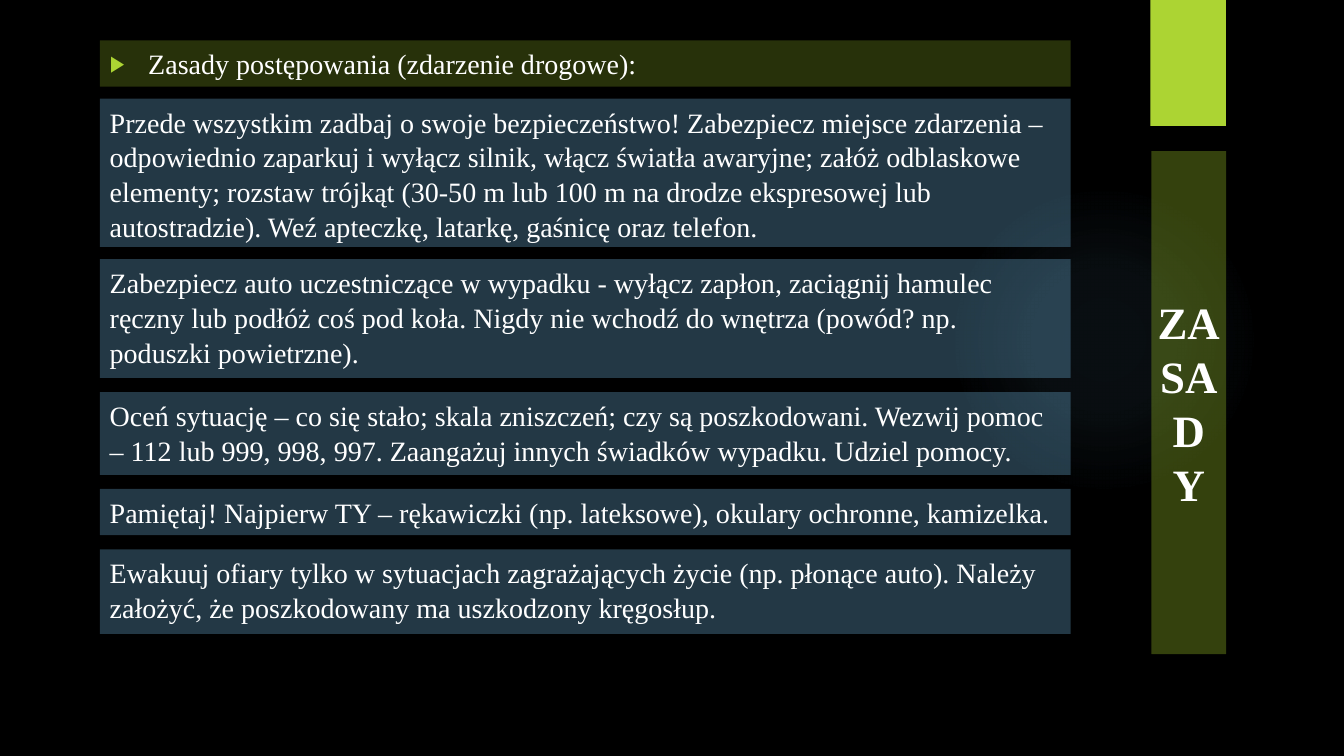
from lxml.etree import SubElement
from pptx import Presentation
from pptx.dml.color import RGBColor
from pptx.enum.shapes import MSO_SHAPE
from pptx.enum.text import MSO_ANCHOR, MSO_AUTO_SIZE, PP_ALIGN
from pptx.oxml import parse_xml
from pptx.oxml.ns import nsdecls, qn
from pptx.util import Inches, Pt

FONT = "Times New Roman"
WHITE, BLACK = "FFFFFF", "000000"
LIME, OLIVE, SKY = "ACD433", "83A322", "7AC4F0"

RULES_LEFT, RULES_WIDTH = 0.99, 9.63
RULES = [
    (0.98, 1.47, "Przede wszystkim zadbaj o swoje bezpieczeństwo! Zabezpiecz miejsce zdarzenia – "
     "odpowiednio zaparkuj i wyłącz silnik, włącz światła awaryjne; załóż odblaskowe elementy; "
     "rozstaw trójkąt (30-50 m lub 100 m na drodze ekspresowej lub autostradzie). "
     "Weź apteczkę, latarkę, gaśnicę oraz telefon."),
    (2.57, 1.18, "Zabezpiecz auto uczestniczące w wypadku - wyłącz zapłon, zaciągnij hamulec "
     "ręczny lub podłóż coś pod koła. Nigdy nie wchodź do wnętrza (powód? np. poduszki "
     "powietrzne)."),
    (3.89, 0.82, "Oceń sytuację – co się stało; skala zniszczeń; czy są poszkodowani. Wezwij "
     "pomoc – 112 lub 999, 998, 997. Zaangażuj innych świadków wypadku. Udziel pomocy."),
    (4.85, 0.46, "Pamiętaj! Najpierw TY – rękawiczki (np. lateksowe), okulary ochronne, kamizelka."),
    (5.45, 0.84, "Ewakuuj ofiary tylko w sytuacjach zagrażających życie (np. płonące auto). "
     "Należy założyć, że poszkodowany ma uszkodzony kręgosłup."),
]


def color(value):
    return RGBColor.from_string(value)


def paint(shape, fill, opacity=100):
    shape.fill.solid()
    shape.fill.fore_color.rgb = color(fill)
    if opacity < 100:
        tint = shape.fill._xPr.find(qn("a:solidFill"))[0]
        SubElement(tint, qn("a:alpha"), val=str(opacity * 1000))


def write(shape, text, size=20, bold=False, align=PP_ALIGN.LEFT, anchor=MSO_ANCHOR.TOP,
          spacing=1.04, bullet=None):
    frame = shape.text_frame
    frame.word_wrap = True
    frame.auto_size = MSO_AUTO_SIZE.NONE
    frame.vertical_anchor = anchor
    frame.text = text
    paragraph = frame.paragraphs[0]
    paragraph.alignment = align
    paragraph.line_spacing = spacing
    paragraph.space_before = Pt(0)
    if bullet:
        properties = paragraph._p.get_or_add_pPr()
        properties.set("marL", str(Inches(0.38)))
        properties.set("indent", str(Inches(-0.38)))
        tint = SubElement(properties, qn("a:buClr"))
        SubElement(tint, qn("a:srgbClr"), val=LIME)
        SubElement(properties, qn("a:buSzPct"), val="80000")
        SubElement(properties, qn("a:buChar"), char=bullet)
    font = paragraph.font
    font.name, font.size, font.bold = FONT, Pt(size), bold
    font.color.rgb = color(WHITE)


class RulesSlide:
    def __init__(self, deck):
        self.slide = deck.slides.add_slide(deck.slide_layouts[1])
        self.slide.background.fill.solid()
        self.slide.background.fill.fore_color.rgb = color(BLACK)

    def place(self, shape, left, top, width, height):
        shape.left, shape.top = Inches(left), Inches(top)
        shape.width, shape.height = Inches(width), Inches(height)

    def block(self, kind, left, top, width, height, fill, opacity=100):
        shape = self.slide.shapes.add_shape(
            kind, Inches(left), Inches(top), Inches(width), Inches(height))
        shape.shadow.inherit = False
        shape.line.fill.background()
        paint(shape, fill, opacity)
        return shape

    def glow(self, left, top, size):
        glow = self.block(MSO_SHAPE.OVAL, left, top, size, size, SKY)
        stops = "".join(
            f'<a:gs pos="{position * 1000}"><a:srgbClr val="{SKY}">'
            f'<a:alpha val="{opacity * 1000}"/></a:srgbClr></a:gs>'
            for position, opacity in ((0, 7), (36, 6), (69, 0), (100, 0)))
        gradient = parse_xml(
            f'<a:gradFill {nsdecls("a")}><a:gsLst>{stops}</a:gsLst><a:path path="circle">'
            '<a:fillToRect l="50000" t="50000" r="50000" b="50000"/></a:path></a:gradFill>')
        solid = glow._element.spPr.find(qn("a:solidFill"))
        solid.getparent().replace(solid, gradient)
        self.slide.shapes._spTree.insert(2, glow._element)

    def tab(self, left, top, width, height):
        tab = self.block(MSO_SHAPE.RECTANGLE, left, top, width, height, LIME)
        effects = tab._element.spPr.find(qn("a:effectLst"))
        shadow = SubElement(effects, qn("a:outerShdw"), blurRad=str(Pt(3)), dist=str(Pt(2)),
                            dir="5400000", rotWithShape="0")
        tint = SubElement(shadow, qn("a:srgbClr"), val=BLACK)
        SubElement(tint, qn("a:alpha"), val="45000")

    def title(self, text, *box):
        title = self.slide.shapes.title
        self.place(title, *box)
        paint(title, OLIVE, 40)
        write(title, text, size=32, bold=True, align=PP_ALIGN.CENTER,
              anchor=MSO_ANCHOR.MIDDLE, spacing=1)
        title.text_frame._txBody.bodyPr.set("vert", "vert")

    def heading(self, text, *box):
        heading = self.slide.placeholders[1]
        self.place(heading, *box)
        paint(heading, OLIVE, 30)
        write(heading, text, bullet="▶")

    def rule(self, text, *box):
        write(self.block(MSO_SHAPE.RECTANGLE, *box, SKY, 29), text)


def main():
    deck = Presentation()
    deck.slide_width, deck.slide_height = Inches(13.33), Inches(7.5)
    page = RulesSlide(deck)
    page.glow(9.41, 1.83, 3.08)
    page.tab(11.41, 0, 0.75, 1.25)
    page.title("ZASADY", 11.42, 1.5, 0.74, 4.99)
    page.heading("Zasady postępowania (zdarzenie drogowe):", RULES_LEFT, 0.4, RULES_WIDTH, 0.46)
    for top, height, text in RULES:
        page.rule(text, RULES_LEFT, top, RULES_WIDTH, height)
    deck.save("out.pptx")


if __name__ == "__main__":
    main()
